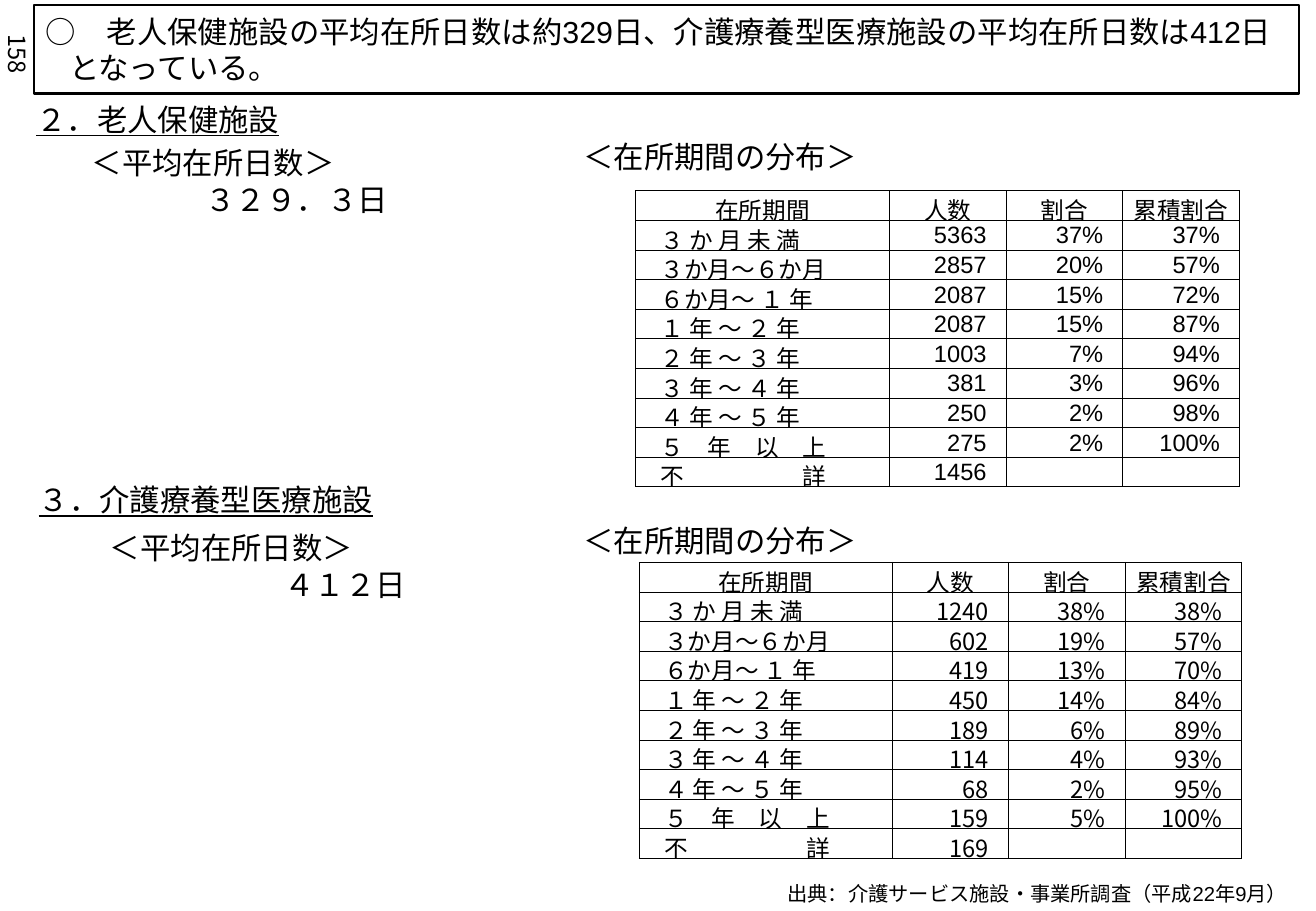
from lxml.etree import SubElement
from pptx import Presentation
from pptx.dml.color import RGBColor
from pptx.enum.shapes import MSO_SHAPE
from pptx.enum.text import MSO_ANCHOR, PP_ALIGN
from pptx.oxml import parse_xml
from pptx.oxml.ns import nsdecls, qn
from pptx.util import Inches, Pt

COLORS = {"ink": "000000"}
LATIN, JAPANESE = "Arial", "Noto Sans CJK JP"
LEFT, CENTER, RIGHT = PP_ALIGN.LEFT, PP_ALIGN.CENTER, PP_ALIGN.RIGHT


def format_text(text_frame, size, font_name, alignments, underline=None):
    for paragraph, alignment in zip(text_frame.paragraphs, alignments):
        paragraph.alignment = alignment
        for run in paragraph.runs:
            run.font.size = Pt(size)
            run.font.name = font_name
            run.font.underline = underline
            run.font.color.rgb = RGBColor.from_string(COLORS["ink"])
            if font_name == JAPANESE:
                SubElement(run.font._element, qn("a:ea"), typeface=font_name)


def add_text(left, top, width, height, text, size, font_name, alignments, underline=None):
    box = slide.shapes.add_textbox(Inches(left), Inches(top), Inches(width), Inches(height))
    box.text_frame.word_wrap = True
    box.text_frame.text = text
    format_text(box.text_frame, size, font_name, alignments, underline)
    return box


presentation = Presentation()
presentation.slide_width = Inches(10.83)
presentation.slide_height = Inches(7.5)
slide = presentation.slides.add_slide(presentation.slide_layouts[6])

summary = slide.shapes.add_shape(
    MSO_SHAPE.RECTANGLE, Inches(0.28), Inches(0.04), Inches(10.41), Inches(0.73)
)
summary.shadow.inherit = False
summary.fill.background()
summary.line.color.rgb = RGBColor.from_string(COLORS["ink"])
summary.line.width = Pt(1.5)
summary.text_frame.word_wrap = True
summary.text_frame.vertical_anchor = MSO_ANCHOR.MIDDLE
summary.text_frame.text = (
    "○　老人保健施設の平均在所日数は約329日、"
    "介護療養型医療施設の平均在所日数は412日となっている。"
)
format_text(summary.text_frame, 18, LATIN, [LEFT])
hanging = summary.text_frame.paragraphs[0]._p.get_or_add_pPr()
hanging.set("marL", str(Inches(0.19)))
hanging.set("indent", str(-Inches(0.19)))

TEXTS = [
    (0.2, 0.78, 3.18, 0.4, "２．老人保健施設", 18, [LEFT], True),
    (0.22, 1.14, 3.07, 0.71, "＜平均在所日数＞\n３２９．３日", 18, [CENTER, RIGHT], None),
    (4.39, 1.09, 3.07, 0.4, "＜在所期間の分布＞", 18, [CENTER], None),
    (0.22, 3.91, 3.18, 0.4, "３．介護療養型医療施設", 18, [LEFT], True),
    (0.37, 4.31, 3.07, 0.71, "＜平均在所日数＞\n４１２日", 18, [CENTER, RIGHT], None),
    (4.39, 4.25, 3.07, 0.4, "＜在所期間の分布＞", 18, [CENTER], None),
    (3.37, 7.21, 7.32, 0.3, "出典：介護サービス施設・事業所調査（平成22年9月）", 12, [RIGHT], None),
]
for left, top, width, height, text, size, alignments, underline in TEXTS:
    add_text(left, top, width, height, text, size, LATIN, alignments, underline)

page_number = add_text(-0.25, 0.29, 0.79, 0.31, "158", 14, JAPANESE, [CENTER])
page_number.rotation = 90
page_number.text_frame.vertical_anchor = MSO_ANCHOR.MIDDLE

HEADERS = ["在所期間", "人数", "割合", "累積割合"]
PERIODS = [
    "　３ か 月 未 満", "　３か月～６か月", "　６か月～ １ 年", "　１ 年 ～ ２ 年",
    "　２ 年 ～ ３ 年", "　３ 年 ～ ４ 年", "　４ 年 ～ ５ 年", "　５　年　以　上",
    "　不　　　　　詳",
]
TABLES = [
    (5.23, 1.57, 2.09, LATIN,
     [5363, 2857, 2087, 2087, 1003, 381, 250, 275, 1456],
     ["37%", "20%", "15%", "15%", "7%", "3%", "2%", "2%", ""],
     ["37%", "57%", "72%", "87%", "94%", "96%", "98%", "100%", ""]),
    (5.26, 4.63, 2.08, JAPANESE,
     [1240, 602, 419, 450, 189, 114, 68, 159, 169],
     ["38%", "19%", "13%", "14%", "6%", "4%", "2%", "5%", ""],
     ["38%", "57%", "70%", "84%", "89%", "93%", "95%", "100%", ""]),
]
for left, top, period_width, font_name, counts, shares, totals in TABLES:
    rows = [HEADERS, *zip(PERIODS, map(str, counts), shares, totals)]
    widths = [period_width, 0.96, 0.96, 0.96]
    table = slide.shapes.add_table(
        len(rows), len(widths), Inches(left), Inches(top), Inches(sum(widths)), Inches(2.44)
    ).table
    table.first_row = False
    table.horz_banding = False
    for column, width in zip(table.columns, widths):
        column.width = Inches(width)
    for row_index, row in enumerate(rows):
        for column_index, text in enumerate(row):
            is_number = row_index > 0 and column_index > 0
            cell = table.cell(row_index, column_index)
            cell.fill.background()
            cell.vertical_anchor = MSO_ANCHOR.MIDDLE
            cell.margin_left = cell.margin_top = Inches(0.01)
            cell.margin_right = Inches(0.16 if is_number else 0.01)
            cell.margin_bottom = 0
            cell.text_frame.text = text
            alignment = CENTER if row_index == 0 else RIGHT if is_number else LEFT
            format_text(cell.text_frame, 14, font_name, [alignment])
            if not text:
                SubElement(cell.text_frame.paragraphs[0]._p, qn("a:endParaRPr"), sz="1400")
            properties = cell._tc.get_or_add_tcPr()
            for position, side in enumerate(["lnL", "lnR", "lnT", "lnB"]):
                properties.insert(position, parse_xml(
                    f'<a:{side} {nsdecls("a")} w="{Pt(0.5)}"><a:solidFill>'
                    f'<a:srgbClr val="{COLORS["ink"]}"/></a:solidFill></a:{side}>'
                ))

presentation.save("out.pptx")
